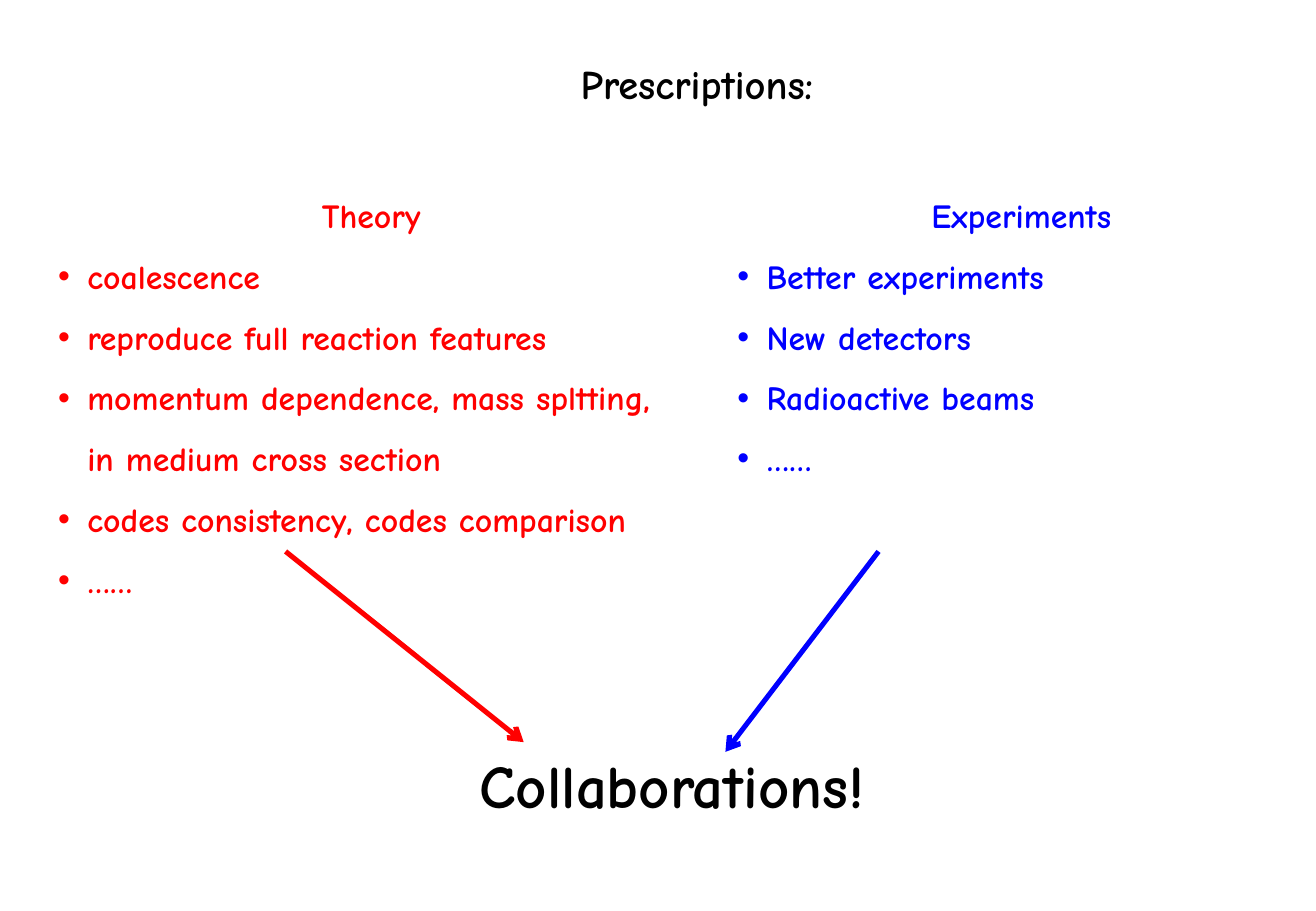
"""Builds a slide on theory and experiment prescriptions leading to collaborations."""
from lxml.etree import SubElement
from pptx import Presentation
from pptx.dml.color import RGBColor
from pptx.enum.shapes import MSO_CONNECTOR
from pptx.enum.text import MSO_AUTO_SIZE, PP_ALIGN
from pptx.oxml.ns import qn
from pptx.util import Inches, Pt

COLORS = {"theory": "FF0000", "experiments": "0000FF", "plain": "000000"}
BULLET_INDENT = Inches(0.24)


def add_text(page, area, lines, size, color, spacing=1.0):
    """Adds a box with a centred first line and bulleted lines below it."""
    box = page.shapes.add_textbox(*[Inches(length) for length in area])
    frame = box.text_frame
    frame.word_wrap = True
    frame.auto_size = MSO_AUTO_SIZE.SHAPE_TO_FIT_TEXT
    for index, line in enumerate(lines):
        para = frame.add_paragraph() if index else frame.paragraphs[0]
        para.text = line
        para.line_spacing = spacing
        if index:
            para.alignment = PP_ALIGN.LEFT
            properties = para._p.get_or_add_pPr()
            properties.set("marL", str(BULLET_INDENT))
            properties.set("indent", str(-BULLET_INDENT))
            SubElement(properties, qn("a:buFont"), typeface="Arial")
            SubElement(properties, qn("a:buChar"), char="•")
        else:
            para.alignment = PP_ALIGN.CENTER
        para.font.name = "Comic Neue"
        para.font.size = Pt(size)
        para.font.bold = True
        para.font.color.rgb = RGBColor.from_string(COLORS[color])


deck = Presentation()
deck.slide_width = Inches(10.83)
deck.slide_height = Inches(7.5)
page = deck.slides.add_slide(deck.slide_layouts[6])

theory = [
    "Theory",
    "coalescence",
    "reproduce full reaction features",
    "momentum dependence, mass spltting, in medium cross section",
    "codes consistency, codes comparison",
    "……",
]
experiments = [
    "Experiments",
    "Better experiments",
    "New detectors",
    "Radioactive beams",
    "……",
]

add_text(page, (0.38, 1.39, 5.35, 4.14), theory, 20, "theory", 1.5)
add_text(page, (4.24, 0.44, 2.99, 0.5), ["Prescriptions:"], 24, "plain")
add_text(page, (5.97, 1.39, 4.87, 3.07), experiments, 20, "experiments", 1.5)
add_text(page, (3.13, 6.11, 4.8, 0.71), ["Collaborations!"], 36, "plain")

arrows = [
    ("theory", (2.35, 4.54, 4.31, 6.11)),
    ("experiments", (7.23, 4.54, 5.97, 6.19)),
]
for color, ends in arrows:
    arrow = page.shapes.add_connector(
        MSO_CONNECTOR.STRAIGHT, *[Inches(length) for length in ends]
    )
    arrow.line.color.rgb = RGBColor.from_string(COLORS[color])
    arrow.line.width = Pt(3)
    SubElement(arrow.line._get_or_add_ln(), qn("a:tailEnd"), type="arrow")
    SubElement(arrow._element.spPr, qn("a:effectLst"))

deck.save("out.pptx")
